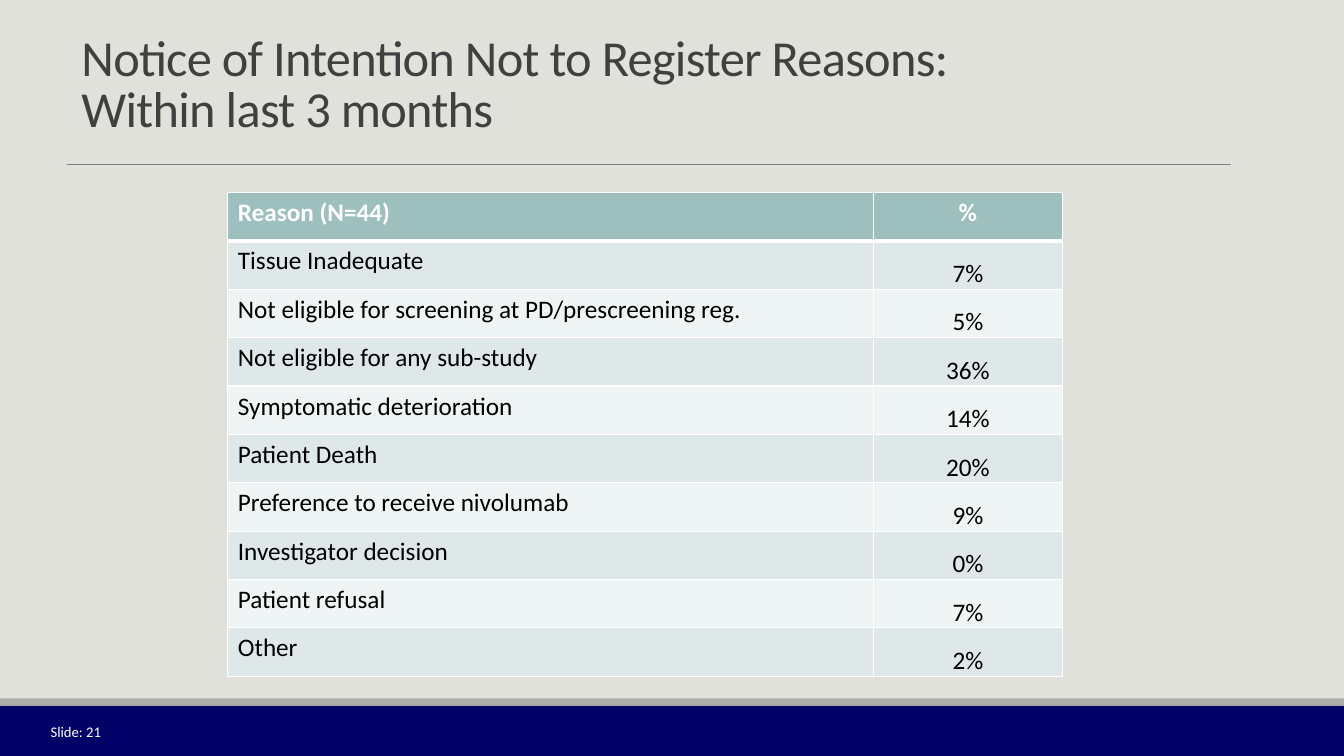
"""Build the slide on reasons for not registering patients."""
import pptx
import pptx.util
import pptx.dml.color
import pptx.enum.shapes
import pptx.enum.text
from lxml import etree

RGBColor = pptx.dml.color.RGBColor
Inches, Pt = pptx.util.Inches, pptx.util.Pt
ALIGN, ANCHOR = pptx.enum.text.PP_ALIGN, pptx.enum.text.MSO_ANCHOR

BACKGROUND = RGBColor(0xE1, 0xE1, 0xDB)
NAVY = RGBColor(0x00, 0x00, 0x66)
BAND_GRAY = RGBColor(0xAC, 0xAD, 0xA8)
RULE_GRAY = RGBColor(0x80, 0x80, 0x80)
TITLE_GRAY = RGBColor(0x40, 0x40, 0x40)
WHITE = RGBColor(0xFF, 0xFF, 0xFF)
BLACK = RGBColor(0x00, 0x00, 0x00)
HEADER_TEAL = RGBColor(0x9D, 0xBF, 0xBE)
ROW_FILLS = (RGBColor(0xDF, 0xE8, 0xE8), RGBColor(0xEF, 0xF4, 0xF4))

FONT = "Calibri"
A = "http://schemas.openxmlformats.org/drawingml/2006/main"
WIDTH, HEIGHT = 13.33, 7.5
COLUMNS, ROW_HEIGHT = (6.4, 1.88), 0.48

REASONS = (
    ("Reason (N=44)", "%"),
    ("Tissue Inadequate", "7%"),
    ("Not eligible for screening at PD/prescreening reg.", "5%"),
    ("Not eligible for any sub-study", "36%"),
    ("Symptomatic deterioration", "14%"),
    ("Patient Death", "20%"),
    ("Preference to receive nivolumab", "9%"),
    ("Investigator decision", "0%"),
    ("Patient refusal", "7%"),
    ("Other", "2%"),
)


def write(tf, text, size=18, color=BLACK, bold=False, align=ALIGN.LEFT,
          line_spacing=None, tracking=None):
    p = tf.paragraphs[0]
    p.text = text
    p.alignment = align
    p.line_spacing = line_spacing
    for r in p.runs:
        r.font.name = FONT
        r.font.size = Pt(size)
        r.font.bold = bold
        r.font.color.rgb = color
        if tracking is not None:
            r.font._element.set("spc", str(int(tracking * 100)))


def add_text(s, box, text, anchor, **text_format):
    tf = s.shapes.add_textbox(*map(Inches, box)).text_frame
    tf.word_wrap = True
    tf.vertical_anchor = anchor
    write(tf, text, **text_format)


def add_band(s, top, height, color):
    sp = s.shapes.add_shape(pptx.enum.shapes.MSO_SHAPE.RECTANGLE,
                            0, Inches(top), Inches(WIDTH), Inches(height))
    sp.shadow.inherit = False
    sp.fill.solid()
    sp.fill.fore_color.rgb = color
    sp.line.fill.background()


def add_rule(s, left, right, y):
    line = s.shapes.add_connector(pptx.enum.shapes.MSO_CONNECTOR.STRAIGHT,
                                  Inches(left), Inches(y), Inches(right), Inches(y))
    line.line.color.rgb = RULE_GRAY
    line.line.width = Pt(0.5)
    etree.SubElement(line._element.spPr, f"{{{A}}}effectLst")


def set_borders(cell, **widths):
    tcPr = cell._tc.get_or_add_tcPr()
    for side, width in widths.items():
        ln = etree.SubElement(tcPr, f"{{{A}}}ln{side}", w=str(Pt(width)))
        fill = etree.SubElement(ln, f"{{{A}}}solidFill")
        etree.SubElement(fill, f"{{{A}}}srgbClr", val=str(WHITE))


def add_reason_table(s, left, top):
    table = s.shapes.add_table(len(REASONS), len(COLUMNS), Inches(left), Inches(top),
                               Inches(sum(COLUMNS)),
                               Inches(ROW_HEIGHT * len(REASONS))).table
    for column, width in zip(table.columns, COLUMNS):
        column.width = Inches(width)
    for i, values in enumerate(REASONS):
        table.rows[i].height = Inches(ROW_HEIGHT)
        header = i == 0
        for j, value in enumerate(values):
            cell = table.cell(i, j)
            set_borders(cell, L=1, R=1, T=3 if i == 1 else 1, B=3 if header else 1)
            cell.fill.solid()
            cell.fill.fore_color.rgb = HEADER_TEAL if header else ROW_FILLS[(i - 1) % 2]
            if j == 1 and not header:
                cell.vertical_anchor = ANCHOR.BOTTOM
                cell.margin_left = cell.margin_right = cell.margin_top = Inches(0.01)
                cell.margin_bottom = 0
            write(cell.text_frame, value, color=WHITE if header else BLACK,
                  bold=header, align=ALIGN.CENTER if j == 1 else ALIGN.LEFT)


def main():
    prs = pptx.Presentation()
    prs.slide_width, prs.slide_height = Inches(WIDTH), Inches(HEIGHT)
    s = prs.slides.add_slide(prs.slide_layouts[6])
    s.background.fill.solid()
    s.background.fill.fore_color.rgb = BACKGROUND

    add_band(s, 7, 0.5, NAVY)
    add_band(s, 6.93, 0.07, BAND_GRAY)
    add_rule(s, 0.66, 12.21, 1.63)
    add_text(s, (0.71, 0.48, 11.53, 0.94),
             "Notice of Intention Not to Register Reasons:\vWithin last 3 months",
             ANCHOR.BOTTOM, size=36, color=TITLE_GRAY, line_spacing=0.85, tracking=-0.5)
    add_reason_table(s, 2.26, 1.91)
    add_text(s, (0.07, 7.06, 1.03, 0.4), "Slide: 21", ANCHOR.MIDDLE,
             size=10.5, color=WHITE, align=ALIGN.RIGHT)
    prs.save("out.pptx")


if __name__ == "__main__":
    main()
